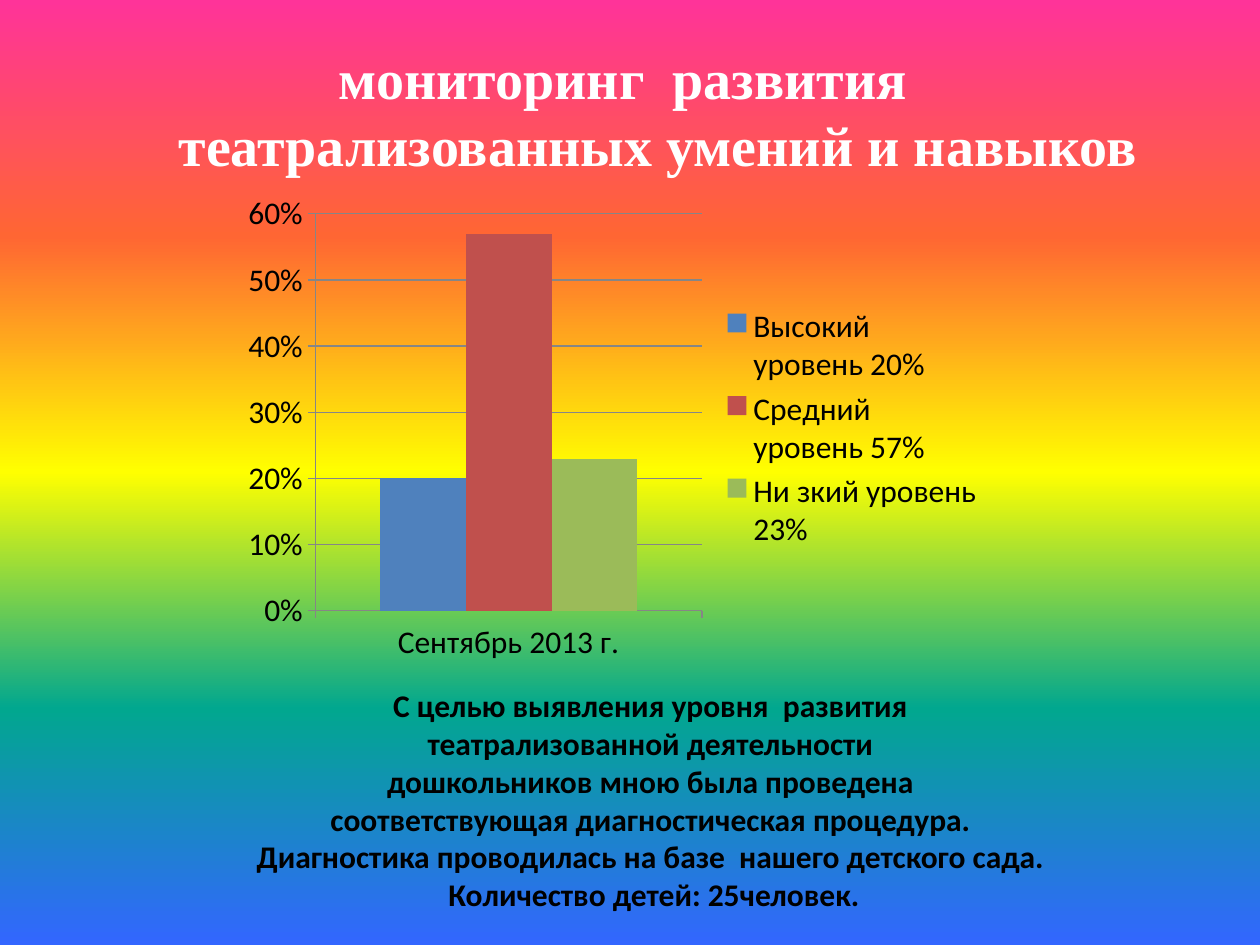
from lxml import etree
from pptx import Presentation
from pptx import util as u
from pptx.chart.data import CategoryChartData
from pptx.dml.color import RGBColor
from pptx.enum import chart as ch, text
from pptx.oxml.ns import qn

PX = 914400 / 126
COLORS = {"title": "FFFFFF", "body": "000000", "axis": "868686",
          "high": "4F81BD", "middle": "C0504D", "low": "9BBB59"}
RAINBOW = ["FF3399", "FF6633", "FFFF00", "01A78F", "3366FF"]


def px(*values):
    return [u.Emu(round(v * PX)) for v in values]


def write_lines(sp, lines, font, size, color):
    tf = sp.text_frame
    tf.word_wrap = True
    tf.vertical_anchor = text.MSO_ANCHOR.TOP
    tf.auto_size = text.MSO_AUTO_SIZE.SHAPE_TO_FIT_TEXT
    for i, line in enumerate(lines):
        p = tf.add_paragraph() if i else tf.paragraphs[0]
        p.alignment = text.PP_ALIGN.CENTER
        r = p.add_run()
        r.text = line
        r.font.name, r.font.size, r.font.bold = font, u.Pt(size), True
        r.font.color.rgb = RGBColor.from_string(color)
    return tf


prs = Presentation()
prs.slide_width, prs.slide_height = px(1260, 945)
slide = prs.slides.add_slide(prs.slide_layouts[5])

# Rainbow background, top to bottom
fill = slide.background.fill
fill.gradient()
fill.gradient_angle = 270
stops = slide.background._cSld.find(".//" + qn("a:gsLst"))
for stop in list(stops):
    stops.remove(stop)
for i, color in enumerate(RAINBOW):
    stop = etree.SubElement(stops, qn("a:gs"), pos=str(i * 25000))
    etree.SubElement(stop, qn("a:srgbClr"), val=color)

# Explanation under the chart
sp = slide.shapes.add_textbox(*px(123, 680, 1062, 242))
write_lines(sp, [
    "С целью выявления уровня  развития ",
    "театрализованной деятельности ",
    "дошкольников мною была проведена ",
    "соответствующая диагностическая процедура. ",
    "Диагностика проводилась на базе  нашего детского сада. ",
    "Количество детей: 25человек.",
], "Calibri", 18, COLORS["body"])

# Column chart of the levels
data = CategoryChartData(number_format="0%")
data.categories = ["Сентябрь 2013 г."]
levels = [("Высокий уровень 20%", 0.2, "high"),
          ("Средний уровень 57%", 0.57, "middle"),
          ("Ни зкий уровень 23%", 0.23, "low")]
for name, value, key in levels:
    data.add_series(name, [value])
chart = slide.shapes.add_chart(ch.XL_CHART_TYPE.COLUMN_CLUSTERED,
                               *px(233, 185, 764, 486), data).chart
chart.has_title = False
chart.font.name, chart.font.size = "Calibri", u.Pt(18)
chart.font.color.rgb = RGBColor.from_string(COLORS["body"])
chart.has_legend = True
chart.legend.position = ch.XL_LEGEND_POSITION.RIGHT
chart.legend.include_in_layout = False

plot = chart.plots[0]
plot.gap_width, plot.overlap, plot.vary_by_categories = 150, 0, False
for series, (name, value, key) in zip(plot.series, levels):
    series.format.fill.solid()
    series.format.fill.fore_color.rgb = RGBColor.from_string(COLORS[key])

cat, val = chart.category_axis, chart.value_axis
val.has_major_gridlines = True
val.minimum_scale, val.maximum_scale, val.major_unit = 0, 0.6, 0.1
val.tick_labels.number_format = "0%"
val.tick_labels.number_format_is_linked = False
for axis in (cat, val):
    axis.major_tick_mark = ch.XL_TICK_MARK.OUTSIDE
for part in (cat, val, val.major_gridlines):
    part.format.line.color.rgb = RGBColor.from_string(COLORS["axis"])
    part.format.line.width = u.Pt(0.75)

# Title, its second line pushed right by an indent
title = slide.shapes.title
title.left, title.top, title.width, title.height = px(64, 37, 1132, 149)
tf = write_lines(title, ["мониторинг  развития ",
                         "театрализованных умений и навыков"],
                 "Times New Roman", 32, COLORS["title"])
pPr = tf.paragraphs[1]._p.get_or_add_pPr()
pPr.set("marL", str(px(56)[0]))
pPr.set("indent", "0")

prs.save("out.pptx")
